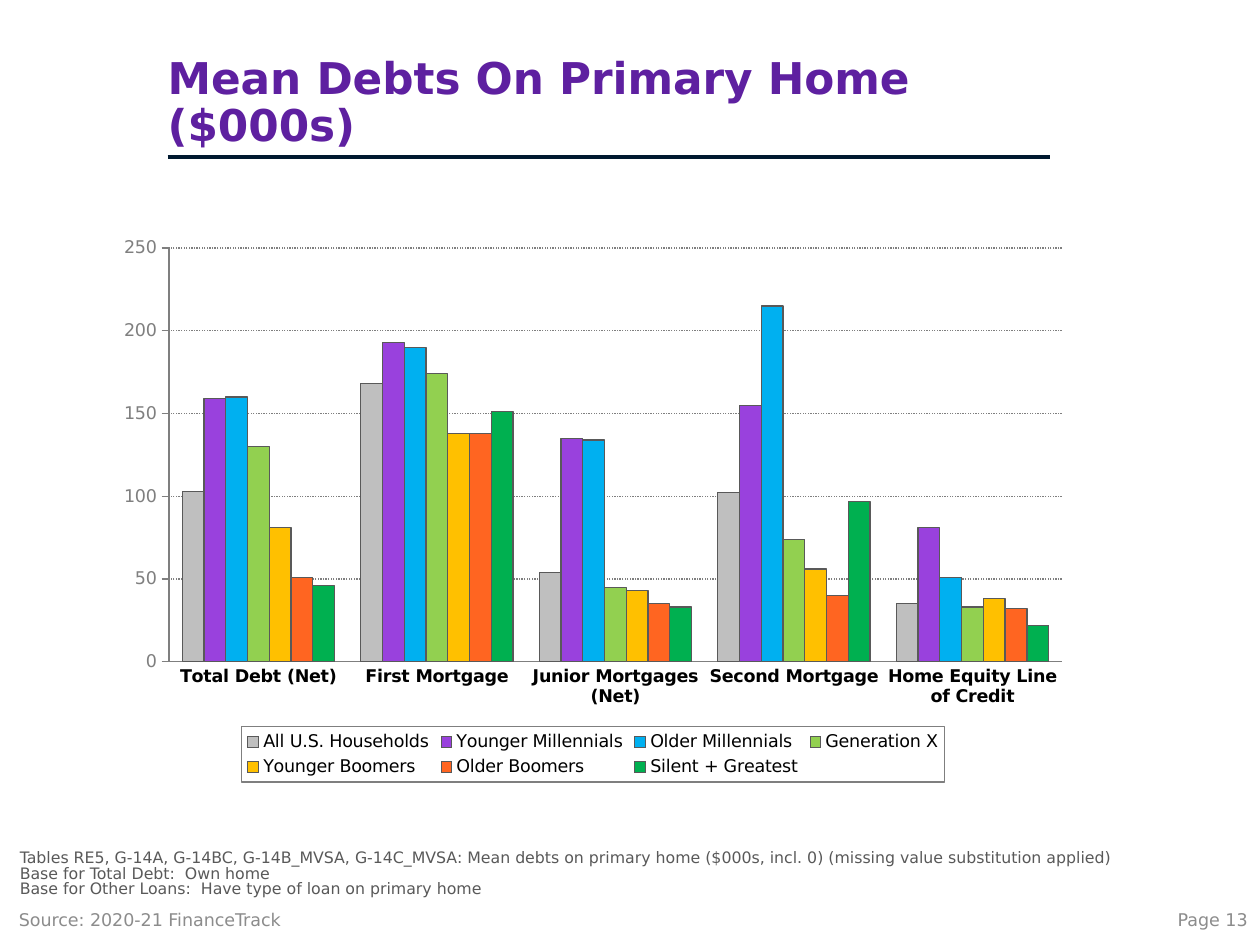
from dataclasses import dataclass

from lxml import etree
from pptx import Presentation
from pptx.chart.data import CategoryChartData
from pptx.dml.color import RGBColor
from pptx.enum.chart import XL_CHART_TYPE, XL_LEGEND_POSITION, XL_TICK_MARK
from pptx.enum.dml import MSO_LINE
from pptx.enum.shapes import MSO_CONNECTOR
from pptx.enum.text import MSO_ANCHOR, MSO_AUTO_SIZE, PP_ALIGN
from pptx.oxml import parse_xml
from pptx.oxml.ns import nsdecls, qn
from pptx.util import Cm, Pt

COLUMNS = XL_CHART_TYPE.COLUMN_CLUSTERED
LEGEND_BOTTOM = XL_LEGEND_POSITION.BOTTOM
TICK_NONE, TICK_OUTSIDE = XL_TICK_MARK.NONE, XL_TICK_MARK.OUTSIDE
DOTTED = MSO_LINE.ROUND_DOT
STRAIGHT = MSO_CONNECTOR.STRAIGHT
MIDDLE, BOTTOM = MSO_ANCHOR.MIDDLE, MSO_ANCHOR.BOTTOM
LEFT, RIGHT = PP_ALIGN.LEFT, PP_ALIGN.RIGHT
FIT_SHAPE = MSO_AUTO_SIZE.SHAPE_TO_FIT_TEXT


@dataclass(frozen=True)
class Theme:
    font: str = "DejaVu Sans"
    title: str = "5E20A0"
    rule: str = "00192F"
    note: str = "595959"
    footer: str = "8C8C8C"
    axis: str = "7F7F7F"
    text: str = "000000"
    title_size: float = 25
    body_size: float = 10
    note_size: float = 9


THEME = Theme()

CATEGORIES = ["Total Debt (Net)", "First Mortgage", "Junior Mortgages (Net)",
              "Second Mortgage", "Home Equity Line of Credit"]
SERIES = [
    ("All U.S. Households", "BFBFBF", (103, 168, 54, 102, 35)),
    ("Younger Millennials", "9941DD", (159, 193, 135, 155, 81)),
    ("Older Millennials", "00B0F0", (160, 190, 134, 215, 51)),
    ("Generation X", "92D050", (130, 174, 45, 74, 33)),
    ("Younger Boomers", "FFC000", (81, 138, 43, 56, 38)),
    ("Older Boomers", "FF6521", (51, 138, 35, 40, 32)),
    ("Silent + Greatest", "00B050", (46, 151, 33, 97, 22)),
]
NOTES = [
    "Tables RE5, G-14A, G-14BC, G-14B_MVSA, G-14C_MVSA: Mean debts on primary home "
    "($000s, incl. 0) (missing value substitution applied)",
    "Base for Total Debt:  Own home",
    "Base for Other Loans:  Have type of loan on primary home",
]


def style_font(font, size, color, bold=False):
    font.name = THEME.font
    font.size = Pt(size)
    font.bold = bold
    font.color.rgb = RGBColor.from_string(color)


def style_line(line, color, width):
    line.color.rgb = RGBColor.from_string(color)
    line.width = Pt(width)


def add_text(slide, box, lines, size, color, bold=False, anchor=MIDDLE,
             align=LEFT, spacing=1.0, insets=(0.25, 0.13)):
    """Add a text box; insets are (sides, top and bottom) in centimetres."""
    shape = slide.shapes.add_textbox(*map(Cm, box))
    frame = shape.text_frame
    frame.word_wrap = True
    frame.vertical_anchor = anchor
    frame.margin_left = frame.margin_right = Cm(insets[0])
    frame.margin_top = frame.margin_bottom = Cm(insets[1])
    frame.text = "\n".join(lines)
    for paragraph in frame.paragraphs:
        paragraph.alignment = align
        paragraph.line_spacing = spacing
        style_font(paragraph.font, size, color, bold)
    return shape


def add_rule(slide, left, right, top):
    rule = slide.shapes.add_connector(STRAIGHT, Cm(left), Cm(top), Cm(right), Cm(top))
    style_line(rule.line, THEME.rule, 2)
    etree.SubElement(rule.element.spPr, qn("a:effectLst"))


def layout_xml(x, y, width, height, inner=False):
    """Return a manual chart layout in fractions of the chart area."""
    target = '<c:layoutTarget val="inner"/>' if inner else ""
    return parse_xml(
        f'<c:layout {nsdecls("c")}><c:manualLayout>{target}'
        '<c:xMode val="edge"/><c:yMode val="edge"/>'
        f'<c:x val="{x}"/><c:y val="{y}"/><c:w val="{width}"/><c:h val="{height}"/>'
        '</c:manualLayout></c:layout>')


def place_part(part, index, layout):
    for old_layout in part.findall(qn("c:layout")):
        part.remove(old_layout)
    part.insert(index, layout)


def style_axes(chart):
    category_axis, value_axis = chart.category_axis, chart.value_axis
    category_axis.major_tick_mark = TICK_NONE
    value_axis.major_tick_mark = TICK_OUTSIDE
    value_axis.minimum_scale = 0
    value_axis.maximum_scale = 250
    value_axis.major_unit = 50
    value_axis.tick_labels.number_format = "#,##0"
    value_axis.tick_labels.number_format_is_linked = False
    style_font(category_axis.tick_labels.font, THEME.body_size, THEME.text, bold=True)
    style_font(value_axis.tick_labels.font, THEME.body_size, THEME.axis)
    gridlines = value_axis.major_gridlines.format.line
    for line in (category_axis.format.line, value_axis.format.line, gridlines):
        style_line(line, THEME.axis, 0.75)
    gridlines.dash_style = DOTTED


def style_legend(chart):
    chart.has_legend = True
    chart.legend.position = LEGEND_BOTTOM
    chart.legend.include_in_layout = False
    style_font(chart.legend.font, THEME.body_size, THEME.text)
    legend = chart.element.xpath("c:chart/c:legend")[0]
    place_part(legend, 1, layout_xml(0.14, 0.9, 0.72, 0.1))
    border = parse_xml(
        f'<c:spPr {nsdecls("c", "a")}><a:ln w="{Pt(0.75)}"><a:solidFill>'
        f'<a:srgbClr val="{THEME.axis}"/></a:solidFill></a:ln></c:spPr>')
    legend.find(qn("c:overlay")).addnext(border)


def add_debt_chart(slide, box):
    data = CategoryChartData()
    data.categories = CATEGORIES
    for name, _, values in SERIES:
        data.add_series(name, values)
    chart = slide.shapes.add_chart(COLUMNS, *map(Cm, box), data).chart
    chart.has_title = False
    style_font(chart.font, THEME.body_size, THEME.text)
    plot = chart.plots[0]
    plot.vary_by_categories = False
    plot.gap_width = 120
    plot.overlap = 0
    for index, (series, (_, color, _)) in enumerate(zip(plot.series, SERIES)):
        series.format.fill.solid()
        series.format.fill.fore_color.rgb = RGBColor.from_string(color)
        style_line(series.format.line, THEME.note, 0.75 if index else 0.5)
    style_axes(chart)
    style_legend(chart)
    plot_area = chart.element.xpath("c:chart/c:plotArea")[0]
    place_part(plot_area, 0, layout_xml(0.066, 0.036, 0.914, 0.747, inner=True))


def main():
    presentation = Presentation()
    presentation.slide_width, presentation.slide_height = Cm(25.4), Cm(19.05)
    slide = presentation.slides.add_slide(presentation.slide_layouts[6])
    add_rule(slide, 3.38, 21.16, 3.17)
    add_text(slide, (3.38, 1.02, 17.78, 2.16), ["Mean Debts On Primary Home ($000s)"],
             THEME.title_size, THEME.title, bold=True, anchor=BOTTOM,
             spacing=0.9, insets=(0, 0.13))
    add_text(slide, (0.13, 18.03, 8.46, 1.02), ["Source: 2020-21 FinanceTrack"],
             THEME.body_size, THEME.footer)
    notes = add_text(slide, (0.4, 17.17, 24.66, 0.92), NOTES, THEME.note_size,
                     THEME.note, anchor=BOTTOM, spacing=0.8, insets=(0, 0))
    notes.text_frame.auto_size = FIT_SHAPE
    add_text(slide, (19.69, 18.03, 5.71, 1.02), ["Page 13"],
             THEME.body_size, THEME.footer, align=RIGHT)
    add_debt_chart(slide, (2.11, 4.6, 19.69, 11.18))
    presentation.save("out.pptx")


if __name__ == "__main__":
    main()
